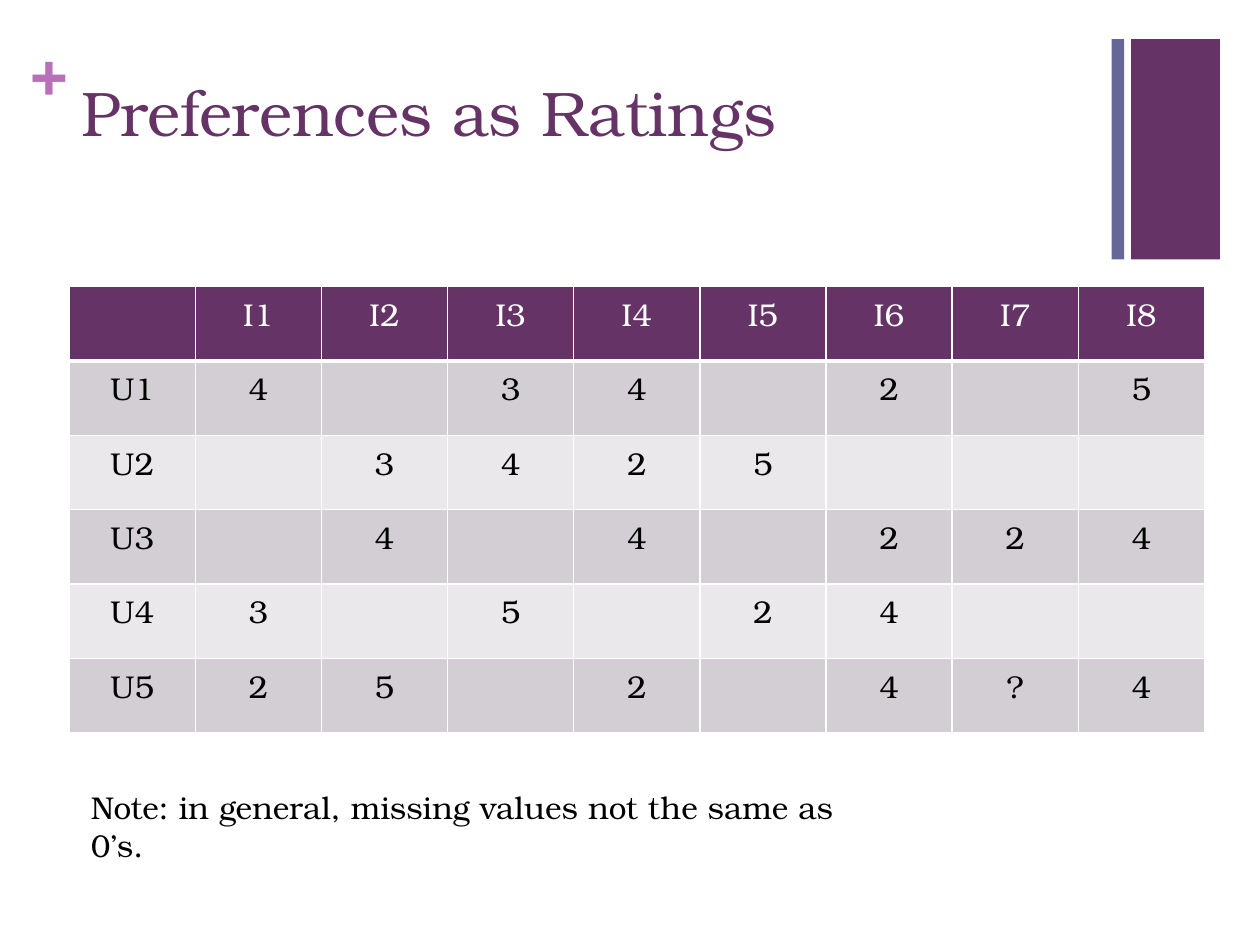
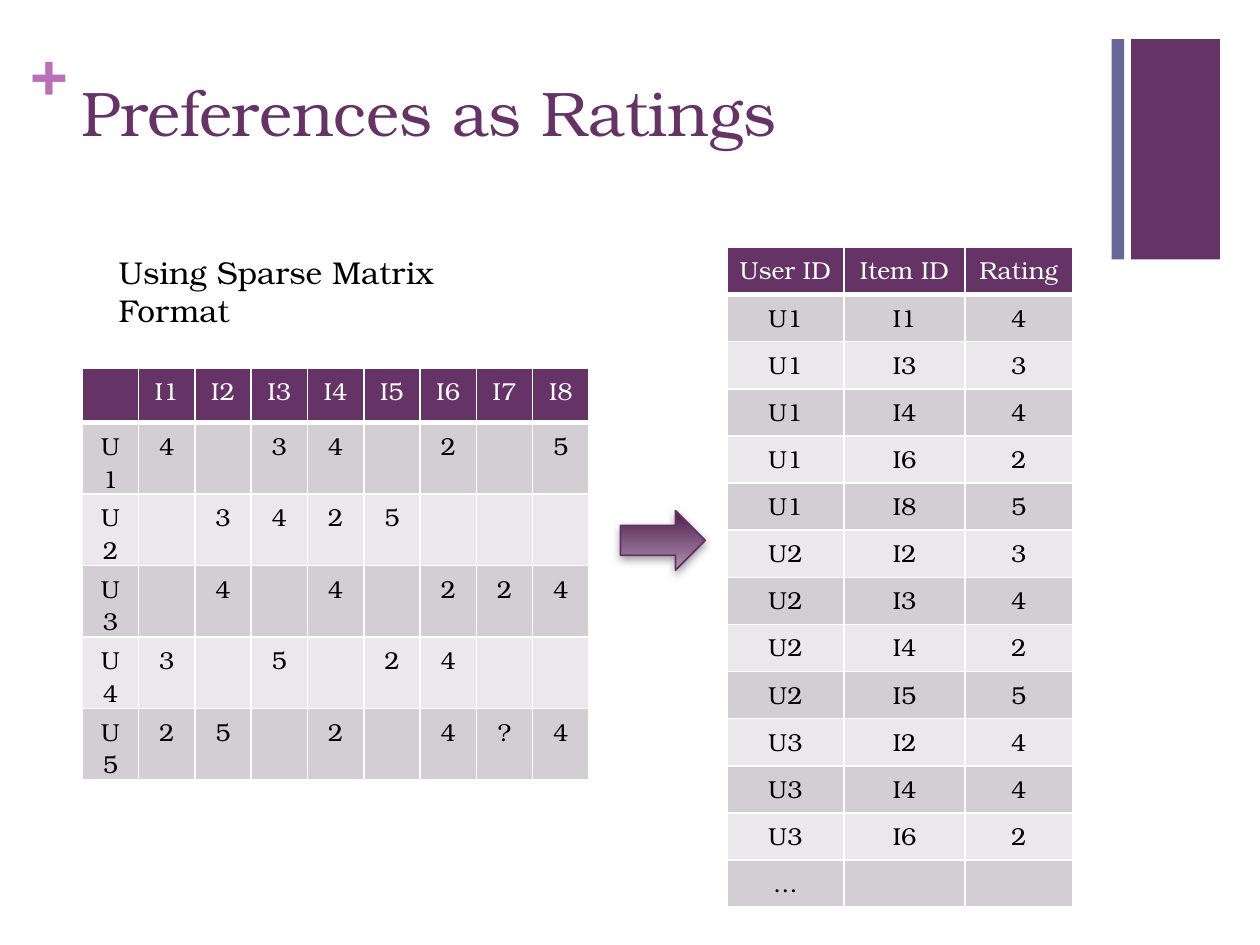
from lxml.etree import SubElement
from pptx import Presentation
from pptx.dml.color import RGBColor
from pptx.enum.shapes import MSO_SHAPE
from pptx.enum.text import PP_ALIGN
from pptx.oxml.ns import qn
from pptx.util import Pt

FONT = "TeX Gyre Bonum"
PLUM, SLATE, ORCHID = "663366", "666699", "B870B8"
WHITE, BLACK = "FFFFFF", "000000"
BANDS = "EAE8EA", "D3CED3"

ITEMS = [f"I{n}" for n in range(1, 9)]
RATINGS = {
    "U1": "4-34-2-5",
    "U2": "-3425---",
    "U3": "-4-4-224",
    "U4": "3-5-24--",
    "U5": "25-2-4?4",
}
MATRIX = [["", *ITEMS]] + [
    [user, *marks.replace("-", " ")] for user, marks in RATINGS.items()
]
TRIPLES = [
    (user, item, mark)
    for user, marks in RATINGS.items()
    for item, mark in zip(ITEMS, marks)
    if mark != "-"
]
SPARSE = [("User ID", "Item ID", "Rating"), *TRIPLES[:12], ("…", "", "")]


def paint(color, value):
    color.rgb = RGBColor.from_string(value)


def fill(target, value):
    target.fill.solid()
    paint(target.fill.fore_color, value)


def write(para, text, size, color, bold=False):
    run = para.add_run()
    run.text = text
    run.font.name = FONT
    run.font.size = Pt(size)
    run.font.bold = bold
    paint(run.font.color, color)


def label(slide, box, text, size, color, bold=False, inset=None):
    frame = slide.shapes.add_textbox(*map(Pt, box)).text_frame
    frame.word_wrap = True
    if inset is not None:
        frame.margin_left = frame.margin_right = Pt(inset)
        frame.margin_top = frame.margin_bottom = Pt(inset)
    write(frame.paragraphs[0], text, size, color, bold)


def block(slide, box, color, kind=MSO_SHAPE.RECTANGLE):
    shape = slide.shapes.add_shape(kind, *map(Pt, box))
    shape.shadow.inherit = False
    fill(shape, color)
    shape.line.fill.background()
    return shape


def edge(cell, side, width):
    line = SubElement(cell._tc.get_or_add_tcPr(), qn(f"a:ln{side}"), w=str(Pt(width)))
    solid = SubElement(line, qn("a:solidFill"))
    SubElement(solid, qn("a:srgbClr"), val=WHITE)


def grid(slide, left, top, widths, height, rows, size):
    frame = slide.shapes.add_table(
        len(rows), len(widths), Pt(left), Pt(top), Pt(sum(widths)), Pt(height * len(rows))
    )
    table = frame.table
    table.first_row = table.horz_banding = False
    for col, width in zip(table.columns, widths):
        col.width = Pt(width)
    for r, row in enumerate(rows):
        table.rows[r].height = Pt(height)
        for c, text in enumerate(row):
            cell = table.cell(r, c)
            for side in "LRTB":
                edge(cell, side, 3 if r == 0 and side == "B" else 1)
            fill(cell, BANDS[r % 2] if r else PLUM)
            para = cell.text_frame.paragraphs[0]
            para.alignment = PP_ALIGN.CENTER
            if text.strip():
                write(para, text, size, BLACK if r else WHITE)
            else:
                SubElement(para._p, qn("a:endParaRPr"), sz=str(size * 100))


def arrow(slide, box):
    shape = block(slide, box, PLUM, MSO_SHAPE.RIGHT_ARROW)
    shape.fill.gradient()
    shape.fill.gradient_angle = 270
    for stop, place, color in zip(shape.fill.gradient_stops, (0, 1), ("4D1A4D", "AF94AF")):
        stop.position = place
        paint(stop.color, color)
    shape.line.width = Pt(1)
    shape.line.fill.solid()
    paint(shape.line.color, "653165")
    glow = SubElement(
        shape._element.spPr.find(qn("a:effectLst")), qn("a:outerShdw"),
        blurRad=str(Pt(5)), dist=str(Pt(2)), dir="5400000", rotWithShape="0",
    )
    tint = SubElement(glow, qn("a:srgbClr"), val="808080")
    SubElement(tint, qn("a:alpha"), val="75000")


def start(deck, title):
    slide = deck.slides.add_slide(deck.slide_layouts[6])
    block(slide, (646.4, 22.3, 50.7, 126), PLUM)
    label(slide, (17.2, 18, 21, 44), "+", 36, ORCHID, bold=True, inset=0)
    block(slide, (635.2, 22.3, 7.2, 126), SLATE)
    label(slide, (39.5, 38.2, 594.7, 87.8), title, 36, PLUM)
    return slide


def main():
    deck = Presentation()
    deck.slide_width, deck.slide_height = Pt(720), Pt(540)
    title = "Preferences as Ratings"

    slide = start(deck, title)
    grid(slide, 39.5, 163.8, [72.1] * 9, 42.5, MATRIX, 18)
    note = "Note: in general, missing values not the same as 0’s."
    label(slide, (44.8, 447, 442.8, 29), note, 18, BLACK)

    slide = start(deck, title)
    grid(slide, 47, 210.2, [32.2] * 9, 31.4, MATRIX, 14)
    grid(slide, 415.3, 141.4, [67, 69.2, 61.3], 26.95, SPARSE, 14)
    label(slide, (60.7, 141.1, 244, 29), "Using Sparse Matrix Format", 18, BLACK)
    arrow(slide, (354.6, 291.8, 48.4, 34))

    deck.save("out.pptx")


if __name__ == "__main__":
    main()
